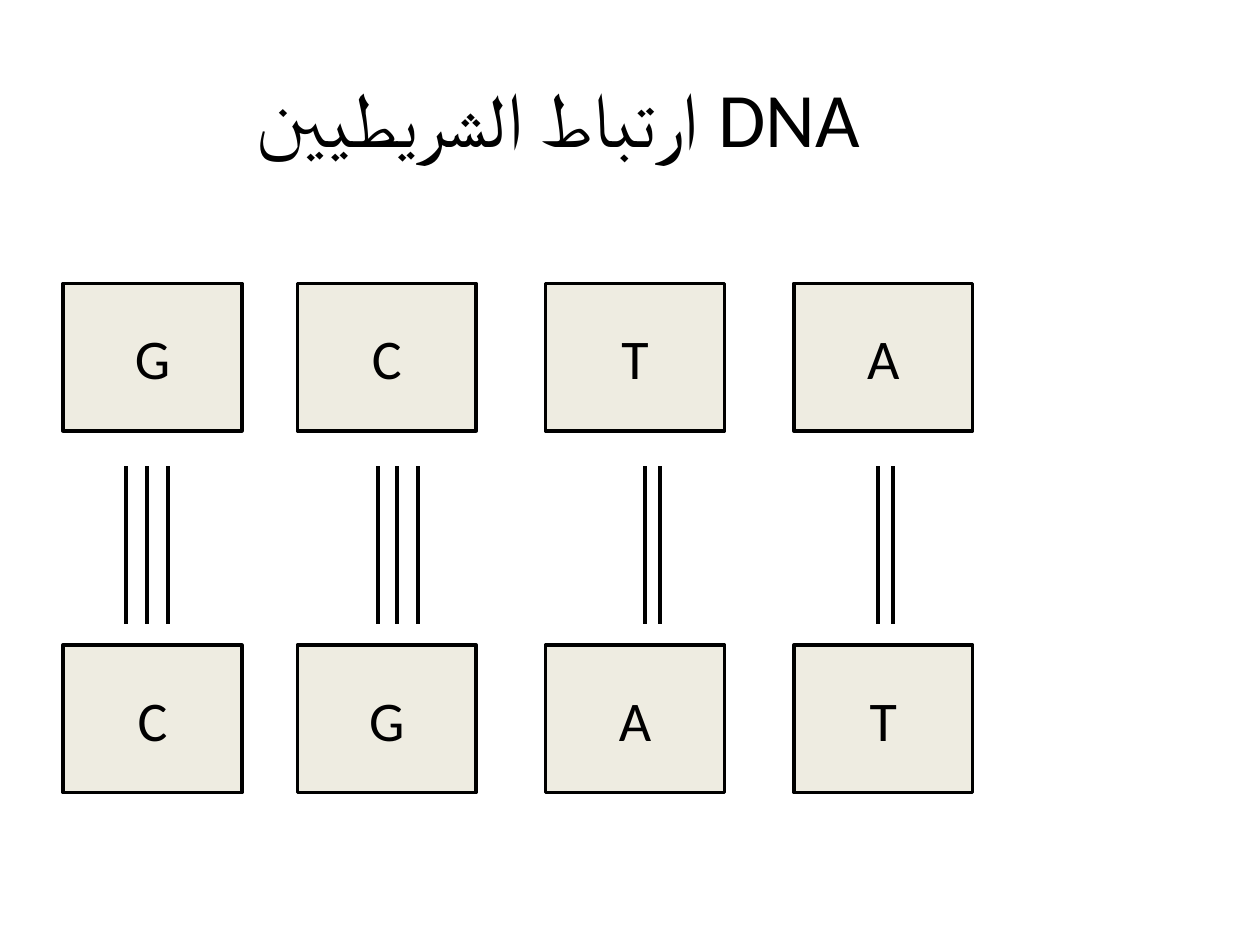
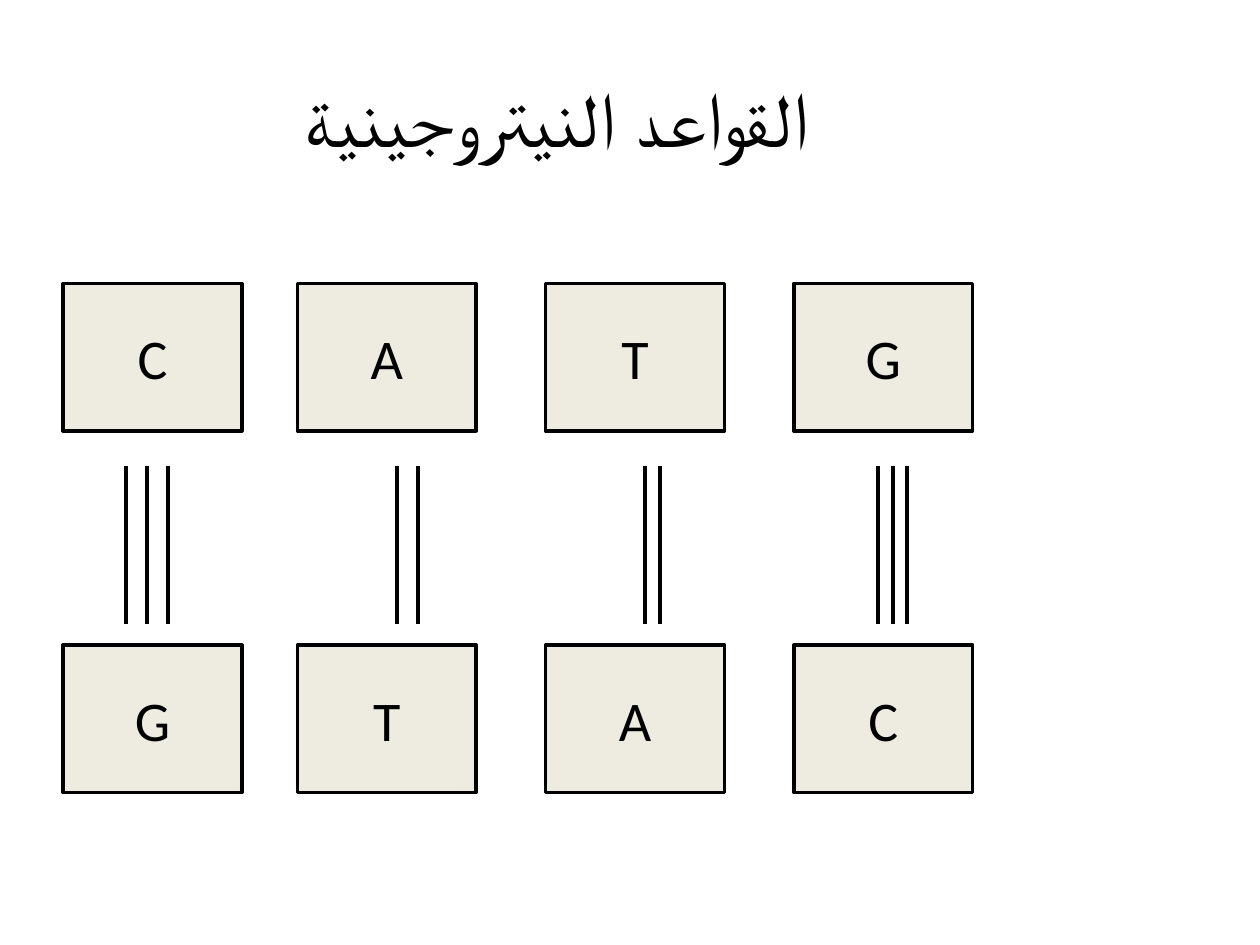
"""Builds two slides that show how the bases of two DNA strands pair up."""
import pptx
import pptx.dml.color
import pptx.enum.shapes
import pptx.enum.text
import pptx.oxml.ns
import pptx.util
from lxml import etree

Inches = pptx.util.Inches
Pt = pptx.util.Pt

STRANDS = [
    ("ارتباط الشريطيين DNA ", "GCTA"),
    ("القواعد النيتروجينية ", "CATG"),
]
PARTNER = {"A": "T", "T": "A", "C": "G", "G": "C"}
BOND_COUNT = {"A": 2, "T": 2, "C": 3, "G": 3}

INK = pptx.dml.color.RGBColor(0x00, 0x00, 0x00)
CREAM = pptx.dml.color.RGBColor(0xEE, 0xEC, 0xE1)

TITLE_FONT = {"name": "Calibri", "size": Pt(44)}
BASE_FONT = {"name": "Calibri", "size": Pt(32)}

BASE_WIDTH, BASE_HEIGHT = 1.42, 1.17
UPPER_TOP, LOWER_TOP = 2.25, 5.12
BOND_TOP, BOND_BOTTOM = 3.7, 4.95
COLUMNS = [
    {"left": 0.5, "bonds": (1.0, 1.17, 1.33)},
    {"left": 2.36, "bonds": (3.32, 3.15, 3.0)},
    {"left": 4.33, "bonds": (5.12, 5.24)},
    {"left": 6.3, "bonds": (6.97, 7.09, 7.2)},
]


def write(shape, text, font_format):
    frame = shape.text_frame
    frame.word_wrap = True
    frame.vertical_anchor = pptx.enum.text.MSO_ANCHOR.MIDDLE
    paragraph = frame.paragraphs[0]
    paragraph.alignment = pptx.enum.text.PP_ALIGN.CENTER
    run = paragraph.add_run()
    run.text = text
    for attribute, value in font_format.items():
        setattr(run.font, attribute, value)
    run.font.color.rgb = INK


def add_title(slide, text):
    title = slide.shapes.add_textbox(Inches(0), Inches(0.3), Inches(9), Inches(1.25))
    write(title, text, TITLE_FONT)


def add_base(slide, letter, left, top):
    base = slide.shapes.add_shape(
        pptx.enum.shapes.MSO_SHAPE.RECTANGLE,
        Inches(left), Inches(top), Inches(BASE_WIDTH), Inches(BASE_HEIGHT))
    base.shadow.inherit = False
    base.fill.solid()
    base.fill.fore_color.rgb = CREAM
    base.line.color.rgb = INK
    base.line.width = Pt(2)
    write(base, letter, BASE_FONT)


def add_bond(slide, x):
    bond = slide.shapes.add_connector(
        pptx.enum.shapes.MSO_CONNECTOR.STRAIGHT,
        Inches(x), Inches(BOND_TOP), Inches(x), Inches(BOND_BOTTOM))
    bond.line.color.rgb = INK
    bond.line.width = Pt(2.25)
    etree.SubElement(bond._element.spPr, pptx.oxml.ns.qn("a:effectLst"))


def add_strand_slide(deck, title, strand):
    slide = deck.slides.add_slide(deck.slide_layouts[6])
    add_title(slide, title)
    for letter, column in zip(strand, COLUMNS):
        add_base(slide, letter, column["left"], UPPER_TOP)
        add_base(slide, PARTNER[letter], column["left"], LOWER_TOP)
        for x in column["bonds"][:BOND_COUNT[letter]]:
            add_bond(slide, x)


def main():
    deck = pptx.Presentation()
    deck.slide_width, deck.slide_height = Inches(10), Inches(7.5)
    for title, strand in STRANDS:
        add_strand_slide(deck, title, strand)
    deck.save("out.pptx")


if __name__ == "__main__":
    main()
